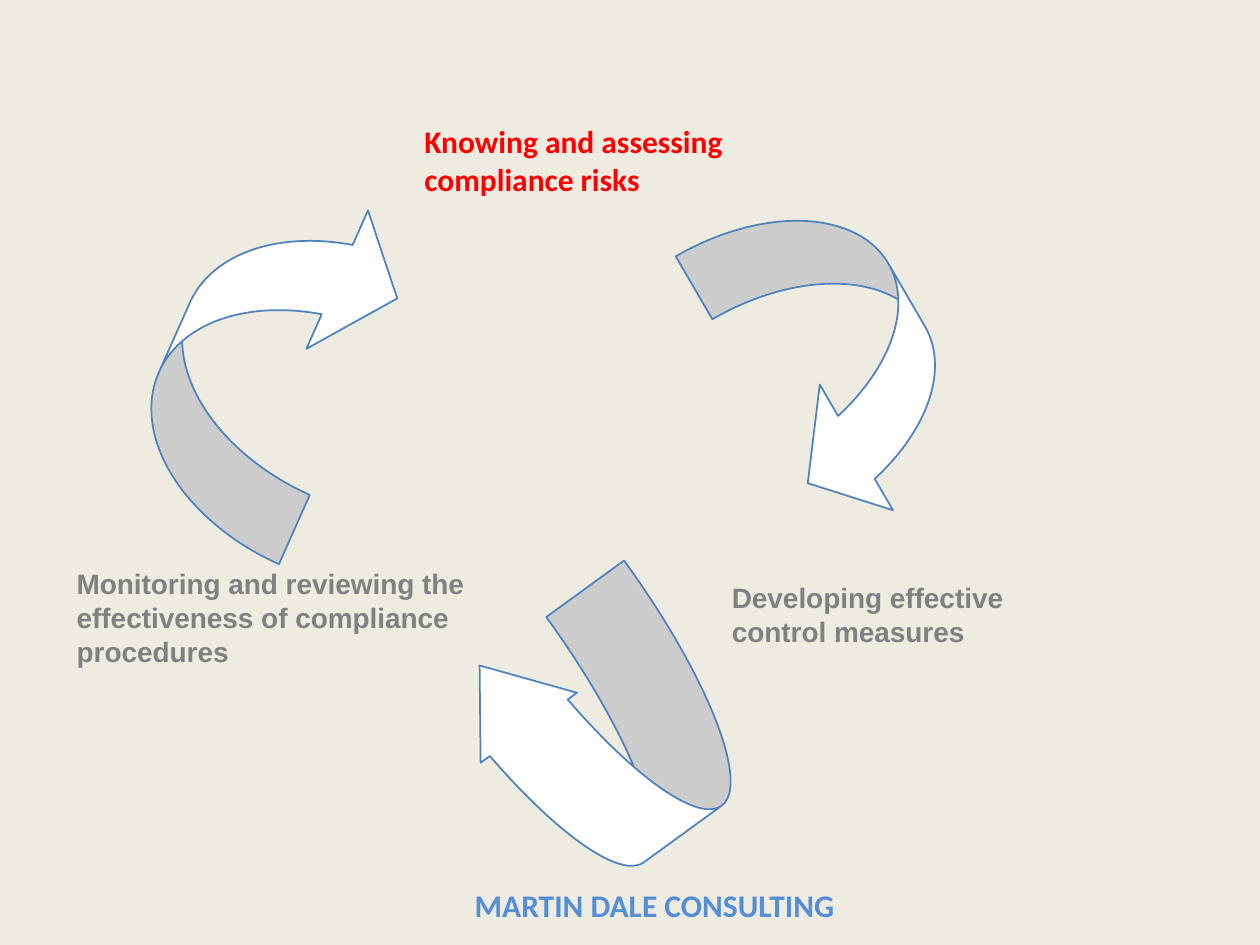
import pptx
import pptx.util
import pptx.dml.color
import pptx.enum.shapes
import pptx.enum.text

Inches = pptx.util.Inches
Pt = pptx.util.Pt

COLORS = {
    "back": "EEECE1",
    "arrow": "FFFFFF",
    "edge": "4F81BD",
    "step": "808080",
    "focus": "FF0000",
    "firm": "558ED5",
}


def tint(name):
    return pptx.dml.color.RGBColor.from_string(COLORS[name])


deck = pptx.Presentation()
deck.slide_width = Inches(10)
deck.slide_height = Inches(7.5)
slide = deck.slides.add_slide(deck.slide_layouts[6])
slide.background.fill.solid()
slide.background.fill.fore_color.rgb = tint("back")

# Cycle arrows: left, top, width, height, rotation, second adjustment
arrows = [
    (5.32, 2.11, 2.66, 1.43, 59.8, 0.807),
    (3.84, 4.81, 1.89, 2.03, 144, 0.5),
    (0.67, 2.1, 2.91, 1.49, 294, 0.807),
]
for *box, angle, head in arrows:
    arrow = slide.shapes.add_shape(
        pptx.enum.shapes.MSO_SHAPE.CURVED_DOWN_ARROW, *map(Inches, box))
    arrow.rotation = angle
    for index, value in enumerate((0.404, head, 0.333)):
        arrow.adjustments[index] = value
    arrow.shadow.inherit = False
    arrow.fill.solid()
    arrow.fill.fore_color.rgb = tint("arrow")
    arrow.line.color.rgb = tint("edge")
    arrow.line.width = Pt(1)

# Labels: left, top, width, height, wording, font, size, color, alignment
LEFT = pptx.enum.text.PP_ALIGN.LEFT
CENTER = pptx.enum.text.PP_ALIGN.CENTER
labels = [
    (3.27, 0.92, 3.07, 0.71, "Knowing and assessing compliance risks",
     "Calibri", 18, "focus", LEFT),
    (5.71, 4.56, 2.84, 0.64, "Developing effective control measures",
     "Arial", 16, "step", LEFT),
    (0.51, 4.45, 3.31, 0.91,
     "Monitoring and reviewing the effectiveness of compliance procedures",
     "Arial", 16, "step", LEFT),
    (3.11, 6.98, 4.17, 0.4, "MARTIN DALE CONSULTING",
     "Calibri", 18, "firm", CENTER),
]
for *box, words, font, size, color, align in labels:
    frame = slide.shapes.add_textbox(*map(Inches, box)).text_frame
    frame.word_wrap = True
    frame.auto_size = pptx.enum.text.MSO_AUTO_SIZE.SHAPE_TO_FIT_TEXT
    para = frame.paragraphs[0]
    para.alignment = align
    run = para.add_run()
    run.text = words
    run.font.name = font
    run.font.size = Pt(size)
    run.font.bold = True
    run.font.color.rgb = tint(color)

deck.save("out.pptx")
